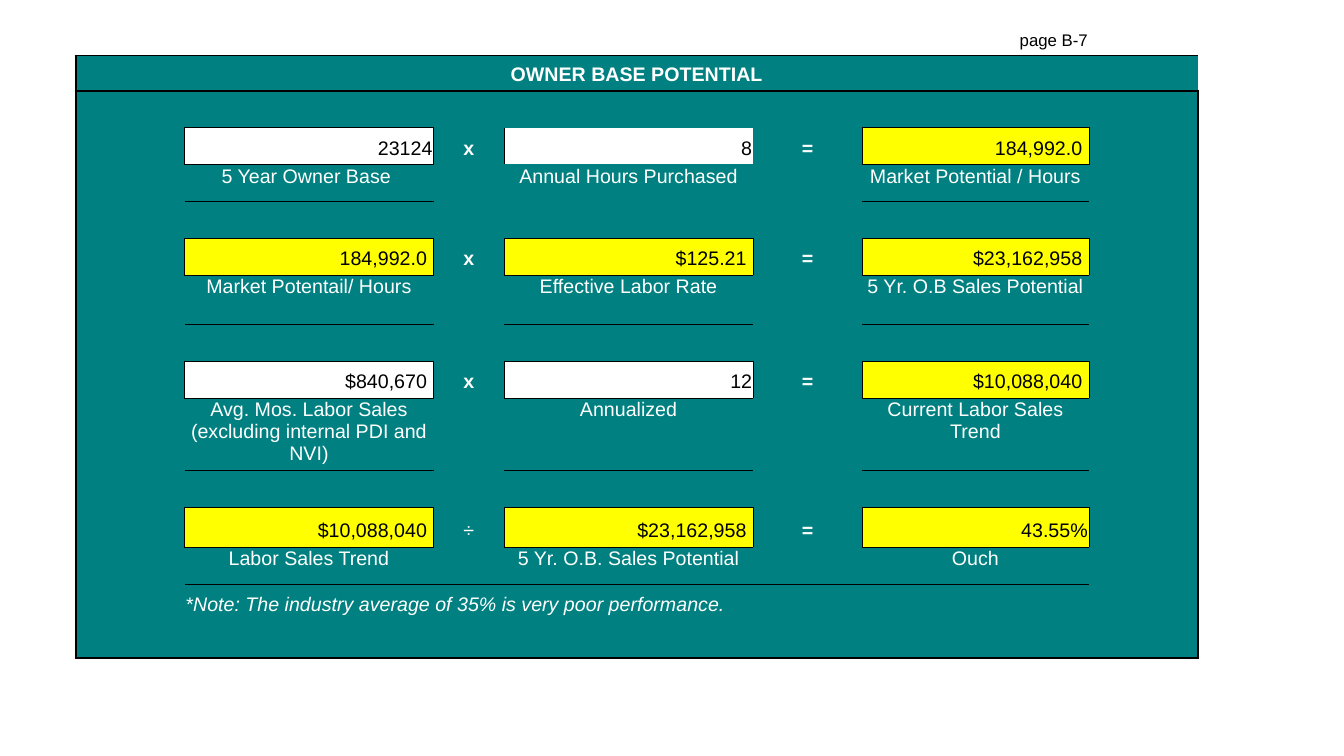
from pptx import Presentation
from pptx.dml.color import RGBColor
from pptx.enum.text import MSO_ANCHOR as Anchor, PP_ALIGN as Align
from pptx.oxml import parse_xml
from pptx.oxml.ns import nsdecls, qn
from pptx.util import Inches, Pt

TEAL, YELLOW, WHITE, BLACK = "008080", "FFFF00", "FFFFFF", "000000"
THIN, THICK = 0.5, 1.5
widths = [1.08, 2.47, 0.7, 2.47, 1.08, 2.25, 1.08]
tall = {0: 0.4, 7: 0.49, 10: 0.71, 12: 0.4}
heights = [tall.get(r, 0.35) for r in range(16)]
last = len(heights) - 1
end = len(widths) - 1

deck = Presentation()
deck.slide_width, deck.slide_height = Inches(13.33), Inches(7.5)
slide = deck.slides.add_slide(deck.slide_layouts[6])
table = slide.shapes.add_table(
    len(heights), len(widths), Inches(0.75), Inches(0.15),
    Inches(sum(widths)), Inches(sum(heights))).table
table.first_row = table.horz_banding = False
style = table._tbl.tblPr.find(qn("a:tableStyleId"))
style.text = "{2D5ABB26-0587-4C30-8999-92F81FD0307C}"
for col, width in zip(table.columns, widths):
    col.width = Inches(width)
for row, height in zip(table.rows, heights):
    row.height = Inches(height)


def paint(fmt, color):
    if hasattr(fmt, "solid"):
        fmt.solid()
        fmt = fmt.fore_color
    else:
        fmt = fmt.color
    fmt.rgb = RGBColor.from_string(color)


def write(text, r, c, size=14, color=WHITE, align=Align.CENTER,
          anchor=Anchor.BOTTOM, bold=False, italic=False):
    cell = table.cell(r, c)
    cell.vertical_anchor = anchor
    para = cell.text_frame.paragraphs[0]
    para.alignment = align
    run = para.add_run()
    run.text = text
    font = run.font
    font.name, font.size = "Arial", Pt(size)
    font.bold, font.italic = bold, italic
    paint(font, color)


sums = {
    3: [("23124", WHITE, "5 Year Owner Base "), "x",
        ("8", None, "Annual Hours Purchased"), "=",
        ("184,992.0 ", YELLOW, "Market Potential / Hours")],
    6: [("184,992.0 ", YELLOW, "Market Potentail/ Hours"), "x",
        ("$125.21 ", YELLOW, "Effective Labor Rate"), "=",
        ("$23,162,958 ", YELLOW, "5 Yr. O.B Sales Potential")],
    9: [("$840,670 ", WHITE, "Avg. Mos. Labor Sales (excluding internal PDI and NVI)"), "x",
        ("12", WHITE, "Annualized"), "=",
        ("$10,088,040 ", YELLOW, "Current Labor Sales Trend")],
    12: [("$10,088,040 ", YELLOW, "Labor Sales Trend"), "÷",
         ("$23,162,958 ", YELLOW, "5 Yr. O.B. Sales Potential"), "=",
         ("43.55%", YELLOW, "Ouch")],
}

fills = {(r, c): TEAL for r in range(1, last + 1) for c in range(end + 1)}
edges = {}
for c in range(end + 1):
    edges[0, c, "B"] = edges[1, c, "T"] = edges[last, c, "B"] = THICK
for r in range(1, last + 1):
    edges[r, 0, "L"] = THICK
    if r > 1:
        edges[r, end, "R"] = THICK

for r, parts in sums.items():
    for c, part in enumerate(parts, 1):
        if isinstance(part, str):
            write(part, r, c, bold=part != "÷")
            continue
        value, fill, label = part
        write(value, r, c, color=BLACK, align=Align.RIGHT)
        write(label, r + 1, c, anchor=Anchor.TOP)
        fills[r, c] = fill
        if fill:
            for side, twin, down, over in (("L", "R", 0, -1), ("R", "L", 0, 1),
                                           ("T", "B", -1, 0), ("B", "T", 1, 0)):
                edges[r, c, side] = edges[r + down, c + over, twin] = THIN

table.cell(1, 0).merge(table.cell(1, end))
table.cell(14, 1).merge(table.cell(14, 4))
write("page B-7", 0, 5, size=12, color=BLACK, align=Align.RIGHT)
write("OWNER BASE POTENTIAL", 1, 0, bold=True)
write("*Note: The industry average of 35% is very poor performance.", 14, 1,
      align=Align.LEFT, italic=True)

for r in range(last + 1):
    for c in range(end + 1):
        cell = table.cell(r, c)
        cell.margin_left = cell.margin_top = cell.margin_right = Inches(0.01)
        cell.margin_bottom = Inches(0.05)
        for side in "LRTB":
            if (r, c, side) in edges:
                cell._tc.get_or_add_tcPr().append(parse_xml(
                    f'<a:ln{side} {nsdecls("a")} w="{Pt(edges[r, c, side])}">'
                    f'<a:solidFill><a:srgbClr val="{BLACK}"/></a:solidFill></a:ln{side}>'))
        if fills.get((r, c)):
            paint(cell.fill, fills[r, c])
        else:
            cell.fill.background()

deck.save("out.pptx")
